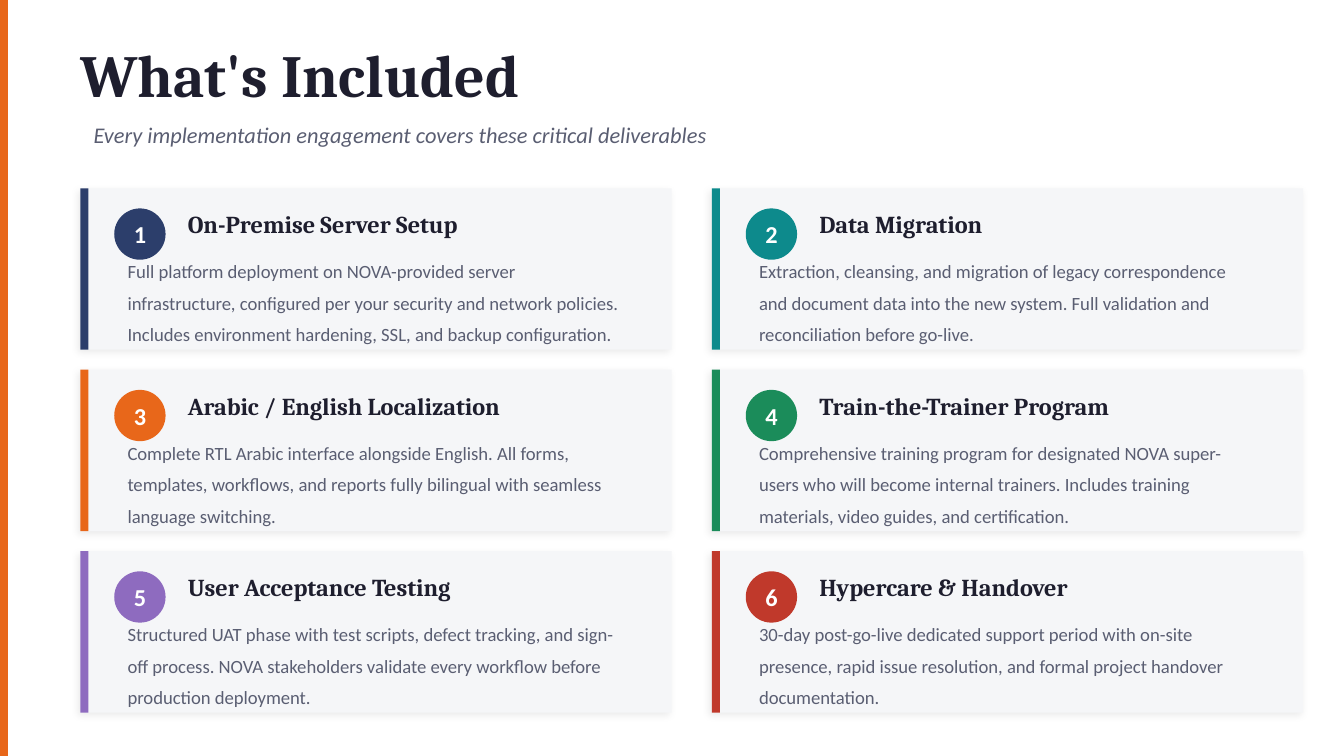
from lxml.etree import SubElement
from pptx import Presentation
from pptx.dml.color import RGBColor
from pptx.enum.shapes import MSO_SHAPE
from pptx.enum.text import MSO_ANCHOR, MSO_AUTO_SIZE, PP_ALIGN
from pptx.oxml.ns import qn
from pptx.util import Cm, Pt

INK, GREY, PANEL, WHITE, ORANGE = "1E1E2E", "5A5E72", "F5F6F8", "FFFFFF", "E8671A"
HEAD, BODY = "Cambria", "Calibri"

CARDS = [
    ("2C3E6B", "On-Premise Server Setup",
     "Full platform deployment on NOVA-provided server infrastructure, configured per your "
     "security and network policies. Includes environment hardening, SSL, and backup configuration."),
    ("0D8A8C", "Data Migration",
     "Extraction, cleansing, and migration of legacy correspondence and document data into "
     "the new system. Full validation and reconciliation before go-live."),
    (ORANGE, "Arabic / English Localization",
     "Complete RTL Arabic interface alongside English. All forms, templates, workflows, and "
     "reports fully bilingual with seamless language switching."),
    ("1B8C5A", "Train-the-Trainer Program",
     "Comprehensive training program for designated NOVA super-users who will become internal "
     "trainers. Includes training materials, video guides, and certification."),
    ("8E6BBF", "User Acceptance Testing",
     "Structured UAT phase with test scripts, defect tracking, and sign-off process. NOVA "
     "stakeholders validate every workflow before production deployment."),
    ("C0392B", "Hypercare & Handover",
     "30-day post-go-live dedicated support period with on-site presence, rapid issue "
     "resolution, and formal project handover documentation."),
]


def color(code):
    return RGBColor.from_string(code)


def write(shape, text, size, face, tint, bold=False, italic=False,
          align=PP_ALIGN.LEFT, inset=True, spacing=None):
    frame = shape.text_frame
    frame.text = text
    frame.word_wrap = True
    frame.auto_size = MSO_AUTO_SIZE.NONE
    frame.vertical_anchor = MSO_ANCHOR.MIDDLE
    if not inset:
        frame.margin_left = frame.margin_right = 0
        frame.margin_top = frame.margin_bottom = 0
    para = frame.paragraphs[0]
    para.alignment = align
    if spacing:
        para.line_spacing = spacing
    font = para.runs[0].font
    font.name, font.size = face, Pt(size)
    font.bold, font.italic = bold, italic
    font.color.rgb = color(tint)


def label(slide, left, top, width, height, *args, **style):
    box = slide.shapes.add_textbox(Cm(left), Cm(top), Cm(width), Cm(height))
    write(box, *args, **style)


def block(slide, kind, left, top, width, height, fill):
    shape = slide.shapes.add_shape(kind, Cm(left), Cm(top), Cm(width), Cm(height))
    shape.shadow.inherit = False
    shape.fill.solid()
    shape.fill.fore_color.rgb = color(fill)
    shape.line.fill.background()
    return shape


def shade(shape):
    effects = shape._element.spPr.find(qn("a:effectLst"))
    outer = SubElement(effects, qn("a:outerShdw"), blurRad=str(Pt(4)), dist=str(Pt(2)),
                       dir="8100000", algn="bl", rotWithShape="0")
    tint = SubElement(outer, qn("a:srgbClr"), val="000000")
    SubElement(tint, qn("a:alpha"), val="8000")


def header(slide, left, top, width):
    title = slide.shapes.title
    title.left, title.top, title.width, title.height = Cm(left), Cm(top), Cm(width), Cm(1.27)
    write(title, "What's Included", 32, HEAD, INK, bold=True, inset=False)
    label(slide, left, top + 1.4, width - 2.54, 0.76,
          "Every implementation engagement covers these critical deliverables",
          12, BODY, GREY, italic=True)


def card(slide, left, top, width, height, number, tint, name, detail):
    panel = block(slide, MSO_SHAPE.RECTANGLE, left, top, width, height, PANEL)
    shade(panel)
    block(slide, MSO_SHAPE.RECTANGLE, left, top, 0.15, height, tint)
    badge = block(slide, MSO_SHAPE.OVAL, left + 0.64, top + 0.38, 0.97, 0.97, tint)
    write(badge, str(number), 13, BODY, WHITE, bold=True, align=PP_ALIGN.CENTER, inset=False)
    label(slide, left + 2.03, top + 0.3, width - 2.8, 0.76, name, 13, HEAD, INK,
          bold=True, inset=False)
    label(slide, left + 0.64, top + 1.32, width - 1.27, 1.52, detail, 10, BODY, GREY,
          spacing=1.4)


def grid(slide, left, top, width, height, cols=2, rows=3, gap_x=0.76, gap_y=0.38):
    wide = (width - gap_x * (cols - 1)) / cols
    high = (height - gap_y * (rows - 1)) / rows
    for index, item in enumerate(CARDS):
        row, col = divmod(index, cols)
        card(slide, left + col * (wide + gap_x), top + row * (high + gap_y),
             wide, high, index + 1, *item)


def main():
    deck = Presentation()
    deck.slide_width, deck.slide_height = Cm(25.4), Cm(14.29)
    slide = deck.slides.add_slide(deck.slide_layouts[5])
    slide.background.fill.solid()
    slide.background.fill.fore_color.rgb = color(WHITE)
    block(slide, MSO_SHAPE.RECTANGLE, 0, 0, 0.15, 14.29, ORANGE)
    header(slide, 1.52, 0.76, 22.86)
    grid(slide, 1.52, 3.56, 23.11, 9.91)
    deck.save("out.pptx")


if __name__ == "__main__":
    main()
